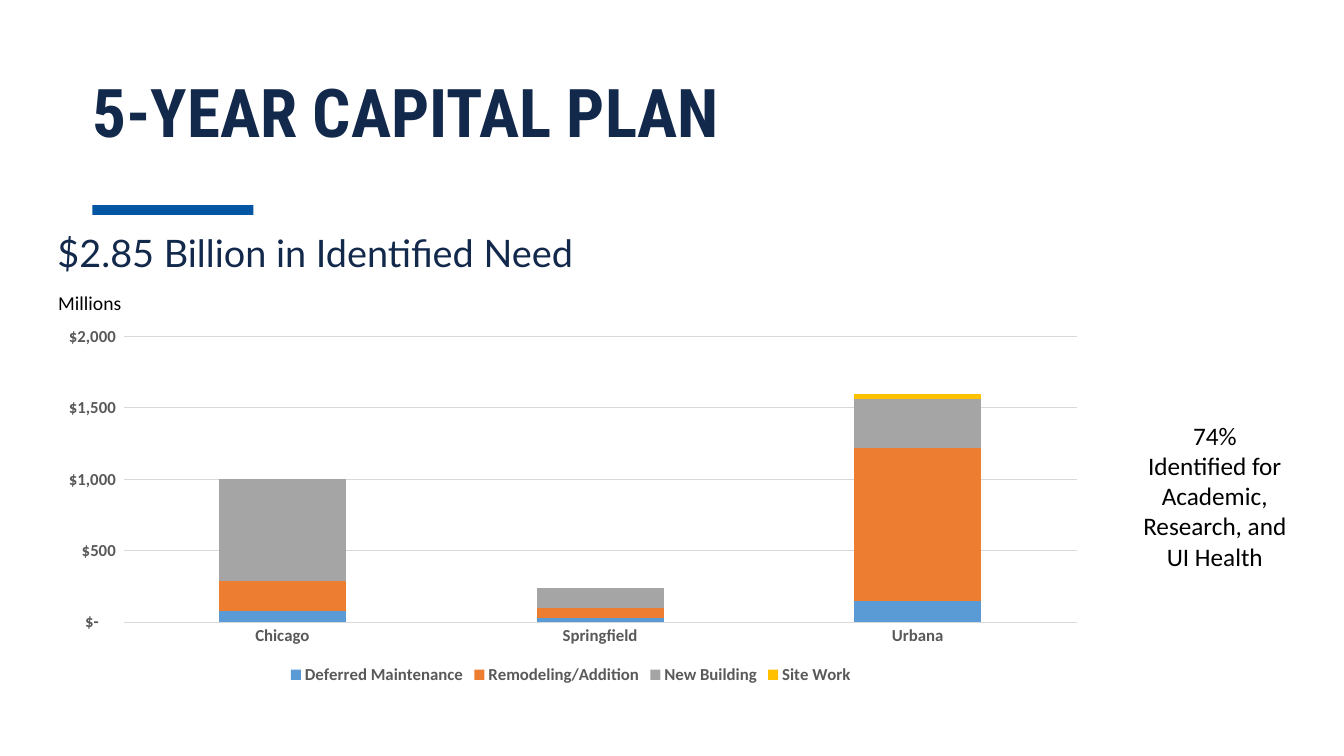
from lxml import etree
from pptx import Presentation
from pptx import util as u
from pptx.chart.data import CategoryChartData
from pptx.dml.color import RGBColor
from pptx.enum import chart as ch, shapes, text

COLORS = {
    "navy": "13294B", "bar": "0455A4", "black": "000000",
    "label": "595959", "grid": "D9D9D9",
    "Deferred Maintenance": "5B9BD5", "Remodeling/Addition": "ED7D31",
    "New Building": "A5A5A5", "Site Work": "FFC000",
}
DOLLARS = '_("$"* #,##0_);_("$"* \\(#,##0\\);_("$"* "-"??_);_(@_)'


def set_all(target, values):
    for name, value in values.items():
        setattr(target, name, value)


class PlanSlide:
    def __init__(self, deck):
        self.slide = deck.slides.add_slide(deck.slide_layouts[6])

    def color(self, name):
        return RGBColor.from_string(COLORS[name])

    def style(self, font, color, **values):
        set_all(font, values)
        font.color.rgb = self.color(color)

    def text(self, words, box, color, font, wrap=True, align=text.PP_ALIGN.LEFT, spacing=1.0):
        frame = self.slide.shapes.add_textbox(*map(u.Pt, box)).text_frame
        set_all(frame, {"word_wrap": wrap, "vertical_anchor": text.MSO_ANCHOR.TOP})
        paragraph = frame.paragraphs[0]
        paragraph.text = words
        set_all(paragraph, {"alignment": align, "line_spacing": spacing})
        for run in paragraph.runs:
            self.style(run.font, color, **font)

    def bar(self, box, color):
        accent = self.slide.shapes.add_shape(
            shapes.MSO_SHAPE.RECTANGLE, *map(u.Pt, box))
        accent.shadow.inherit = False
        accent.fill.solid()
        accent.fill.fore_color.rgb = self.color(color)
        accent.line.fill.background()

    def line(self, line_format, color):
        line_format.width = u.Pt(0.75)
        line_format.color.rgb = self.color(color)

    def stacked_chart(self, box, categories, needs):
        data = CategoryChartData(number_format=DOLLARS)
        data.categories = categories
        for kind, amounts in needs.items():
            data.add_series(kind, amounts)
        chart = self.slide.shapes.add_chart(
            ch.XL_CHART_TYPE.COLUMN_STACKED, *map(u.Pt, box), data).chart
        label = {"name": "Calibri", "size": u.Pt(12), "bold": True}
        self.style(chart.font, "label", **label)
        set_all(chart, {"has_title": False, "has_legend": True})
        set_all(chart.legend, {"position": ch.XL_LEGEND_POSITION.BOTTOM,
                               "include_in_layout": False})
        self.style(chart.legend.font, "label", **label)

        # Stacked columns
        plot = chart.plots[0]
        set_all(plot, {"gap_width": 150, "overlap": 100, "vary_by_categories": False})
        for series in plot.series:
            series.format.fill.solid()
            series.format.fill.fore_color.rgb = self.color(series.name)

        # Axes and gridlines
        for axis in (chart.category_axis, chart.value_axis):
            set_all(axis, {"major_tick_mark": ch.XL_TICK_MARK.NONE,
                           "minor_tick_mark": ch.XL_TICK_MARK.NONE})
            self.style(axis.tick_labels.font, "label", **label)
        self.line(chart.category_axis.format.line, "grid")
        dollars = chart.value_axis
        set_all(dollars, {"minimum_scale": 0, "maximum_scale": 2000,
                          "major_unit": 500, "has_major_gridlines": True})
        set_all(dollars.tick_labels, {"number_format": DOLLARS,
                                      "number_format_is_linked": False})
        dollars.format.line.fill.background()
        self.line(dollars.major_gridlines.format.line, "grid")


def main():
    deck = Presentation()
    set_all(deck, {"slide_width": u.Pt(960), "slide_height": u.Pt(540)})
    plan = PlanSlide(deck)

    # Heading
    plan.text("5-YEAR CAPITAL PLAN", (59, 53.5, 834, 104), "navy",
              {"name": "Roboto Condensed", "size": u.Pt(48), "bold": True}, spacing=0.9)
    plan.text("$2.85 Billion in Identified Need", (34, 164, 446, 298), "navy",
              {"name": "Lato", "size": u.Pt(27)}, spacing=0.9)

    # Need by university
    plan.stacked_chart((31.5, 228, 752.5, 264), ("Chicago", "Springfield", "Urbana"), {
        "Deferred Maintenance": (80, 30, 150),
        "Remodeling/Addition": (210, 70, 1070),
        "New Building": (710, 140, 340),
        "Site Work": (0, 0, 40),
    })
    plan.bar((66, 146.5, 115, 7), "bar")

    # Chart unit and side remark
    plan.text("Millions", (34.5, 204, 63, 24), "black",
              {"name": "Calibri", "size": u.Pt(14)}, wrap=False)
    plan.text("74% Identified for\vAcademic, Research, and UI Health",
              (808, 296.5, 119.5, 117), "black",
              {"name": "Calibri", "size": u.Pt(18)}, align=text.PP_ALIGN.CENTER)

    deck.save("out.pptx")


if __name__ == "__main__":
    main()
